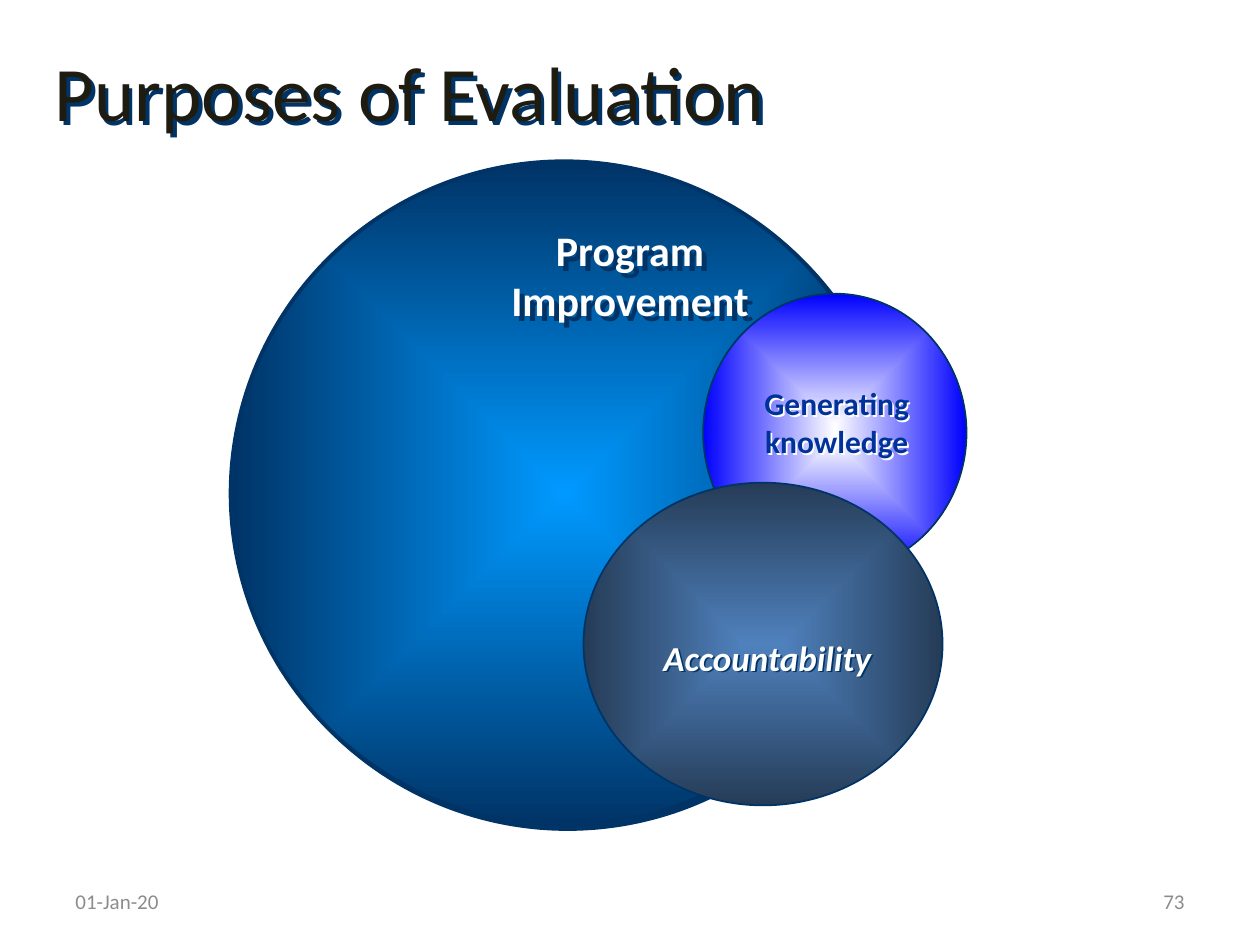
from lxml import etree
from pptx import Presentation
from pptx.dml.color import RGBColor
from pptx.enum.shapes import MSO_SHAPE
from pptx.enum.text import MSO_ANCHOR, MSO_AUTO_SIZE, PP_ALIGN
from pptx.oxml.ns import qn
from pptx.util import Pt

OVAL = MSO_SHAPE.OVAL
TOP, MIDDLE = MSO_ANCHOR.TOP, MSO_ANCHOR.MIDDLE
NO_AUTOSIZE = MSO_AUTO_SIZE.NONE
LEFT, CENTER, RIGHT = PP_ALIGN.LEFT, PP_ALIGN.CENTER, PP_ALIGN.RIGHT
FONT = "Calibri"
COLORS = {
    "title": "1E1C11",
    "navy": "003366",
    "sky": "0099FF",
    "white": "FFFFFF",
    "blue": "0000FF",
    "ink": "003399",
    "steel": "4F81BD",
    "slate": "253C57",
    "footer": "8C8C8C",
}


def color(key):
    """Return the named colour."""
    return RGBColor.from_string(COLORS[key])


def add_shadow(shape, key, distance):
    """Cast a hard shadow down and to the right."""
    properties = shape._element.spPr
    for old in properties.findall(qn("a:effectLst")):
        properties.remove(old)
    effects = etree.SubElement(properties, qn("a:effectLst"))
    shadow = etree.SubElement(
        effects, qn("a:outerShdw"), dist=str(int(Pt(distance))),
        dir="2700000", algn="ctr", rotWithShape="0")
    etree.SubElement(shadow, qn("a:srgbClr"), val=COLORS[key])


def place(shape, box):
    """Move a shape to a box of left, top, width and height."""
    shape.left, shape.top, shape.width, shape.height = map(Pt, box)


def add_circle(slide, box, inner, outer, line_width):
    """Draw one purpose as an ellipse shaded from its centre."""
    circle = slide.shapes.add_shape(OVAL, *map(Pt, box))
    circle.shadow.inherit = False
    circle.fill.gradient()
    for stop, key, position in zip(circle.fill.gradient_stops, (inner, outer), (0, 1)):
        stop.color.rgb = color(key)
        stop.position = position
    gradient = circle._element.spPr.find(qn("a:gradFill"))
    gradient.remove(gradient.find(qn("a:lin")))
    shading = etree.SubElement(gradient, qn("a:path"), path="rect")
    etree.SubElement(shading, qn("a:fillToRect"), l="50000", t="50000", r="50000", b="50000")
    circle.line.color.rgb = color("navy")
    circle.line.width = Pt(line_width)
    return circle


def write(shape, lines, size, key, align, anchor=TOP, wrap=True, bold=False, italic=False):
    """Fill a shape with one paragraph per line."""
    frame = shape.text_frame
    frame.auto_size = NO_AUTOSIZE
    frame.word_wrap = wrap
    frame.vertical_anchor = anchor
    for index, line in enumerate(lines):
        paragraph = frame.add_paragraph() if index else frame.paragraphs[0]
        paragraph.alignment = align
        run = paragraph.add_run()
        run.text = line
        run.font.name = FONT
        run.font.size = Pt(size)
        run.font.bold = bold
        run.font.italic = italic
        run.font.color.rgb = color(key)


def add_label(slide, box, lines, size, key, shadow, distance, wrap=True, italic=False):
    """Name a purpose in bold shadowed text."""
    label = slide.shapes.add_textbox(*map(Pt, box))
    write(label, lines, size, key, CENTER, wrap=wrap, bold=True, italic=italic)
    add_shadow(label, shadow, distance)


def add_title(slide, box):
    """Set the slide title."""
    title = slide.shapes.title
    place(title, box)
    write(title, ["Purposes of Evaluation"], 44, "title", LEFT, MIDDLE)
    add_shadow(title, "navy", 2.8)


def add_purposes(slide, left, top):
    """Draw the overlapping purposes and their labels."""
    def at(x, y, width, height):
        return left + x, top + y, width, height

    program = add_circle(slide, at(0, 0, 381, 379.5), "sky", "navy", 2.25)
    add_shadow(program, "navy", 2.8)
    add_circle(slide, at(270, 75.6, 150.5, 159), "white", "blue", 1)
    add_circle(slide, at(201.6, 183.6, 205.2, 184.4), "steel", "slate", 1)
    add_label(slide, at(144.7, 32.4, 167, 65.5), ["Program", "Improvement"],
              24, "white", "navy", 4, wrap=False)
    add_label(slide, at(258.5, 123.8, 175.7, 50.4), ["Generating knowledge"],
              18, "ink", "white", 1.4)
    add_label(slide, at(204.5, 267.8, 204.5, 31), ["Accountability"],
              20, "white", "navy", 1.4, italic=True)


def add_footer(slide, left, top, width):
    """Put the date at the left and the page number at the right."""
    part_width = 168
    parts = (("01-Jan-20", left, LEFT), ("73", left + width - part_width, RIGHT))
    for text, x, align in parts:
        part = slide.shapes.add_textbox(Pt(x), Pt(top), Pt(part_width), Pt(28.8))
        write(part, [text], 12, "footer", align, MIDDLE)


def main():
    """Build and save the slide."""
    deck = Presentation()
    deck.slide_width, deck.slide_height = Pt(720), Pt(540)
    slide = deck.slides.add_slide(deck.slide_layouts[5])
    add_purposes(slide, 131.8, 92.2)
    add_title(slide, (24, 21.6, 675.4, 60.5))
    add_footer(slide, 36, 500.4, 648)
    deck.save("out.pptx")


if __name__ == "__main__":
    main()
